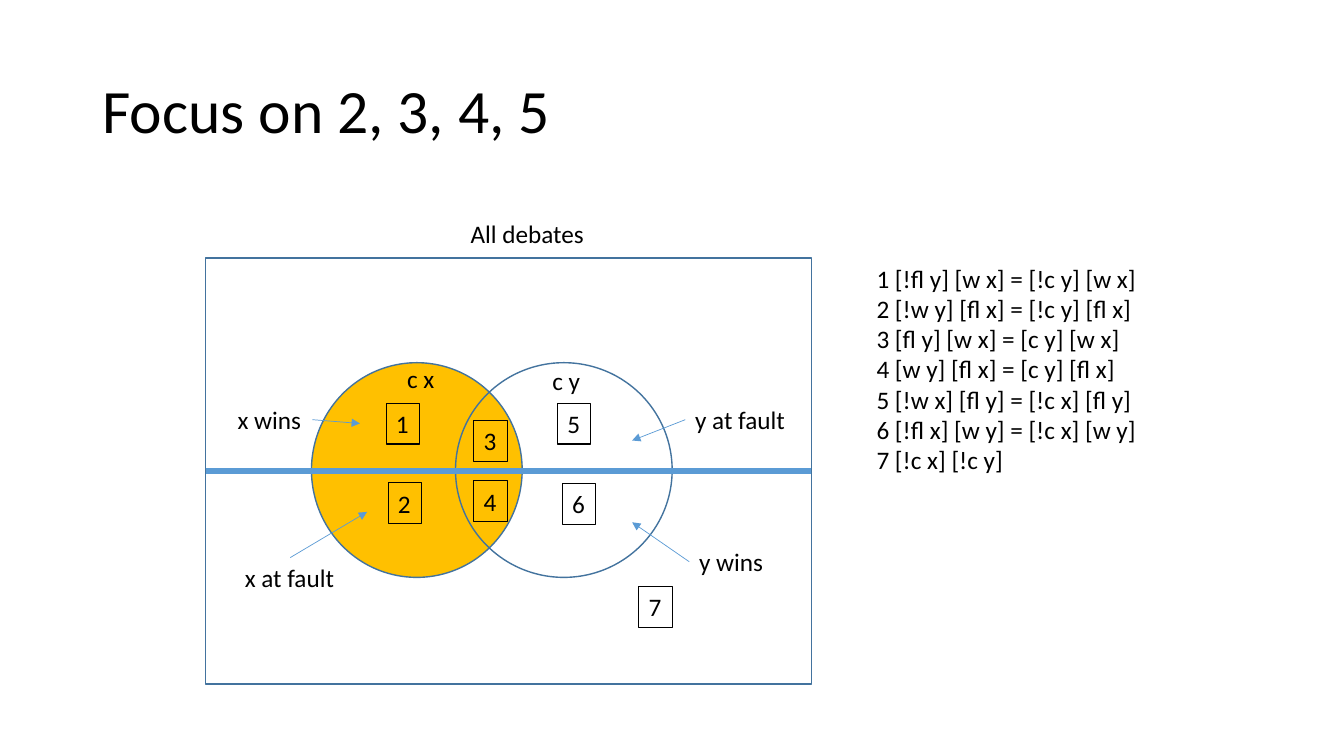
from dataclasses import dataclass
from typing import NamedTuple

import pptx
import pptx.dml.color
import pptx.enum.shapes
import pptx.enum.text
import pptx.oxml.ns
import pptx.oxml.xmlchemy
import pptx.util
from pptx.util import Cm

SHAPE = pptx.enum.shapes.MSO_SHAPE
ANCHOR = pptx.enum.text.MSO_ANCHOR
AUTO_SIZE = pptx.enum.text.MSO_AUTO_SIZE
TOP, LEFT, RIGHT = 0, 1, 3


@dataclass(frozen=True)
class Theme:
    font: str = "Calibri"
    text: str = "000000"
    accent: str = "5B9BD5"
    outline: str = "43739E"
    highlight: str = "FFC000"
    title_size: float = 44
    body_size: float = 18
    title_spacing: float = 0.9
    outline_width: float = 1
    tag_width: float = 0.75
    arrow_width: float = 0.5
    divider_width: float = 4.5


class Area(NamedTuple):
    """A position and size in centimetres."""
    left: float
    top: float
    width: float
    height: float


class Tag(NamedTuple):
    number: str
    left: float
    top: float


class Label(NamedTuple):
    text: str
    left: float
    top: float
    width: float


class Pointer(NamedTuple):
    """A label with an arrow from one of its sides to a region."""
    label: Label
    side: int
    tip_x: float
    tip_y: float


THEME = Theme()
LINE_HEIGHT = 1.03
TAG_WIDTH = 0.84

TITLE = "Focus on 2, 3, 4, 5"
TITLE_AREA = Area(2.33, 1.02, 29.21, 3.68)
X_CIRCLE = Area(7.85, 9.14, 5.31, 5.41)
Y_CIRCLE = Area(11.48, 9.14, 5.46, 5.41)
FRAME = Area(5.18, 6.5, 15.27, 10.74)

TAGS = [
    Tag("1", 9.73, 10.16),
    Tag("3", 11.94, 10.59),
    Tag("5", 14.05, 10.16),
    Tag("2", 9.78, 12.17),
    Tag("6", 14.17, 12.19),
    Tag("4", 11.94, 12.12),
    Tag("7", 16.1, 14.78),
]
LABELS = [
    Label("c x", 10.01, 9.04, 1.22),
    Label("c y", 13.67, 9.09, 1.22),
    Label("All debates", 11.61, 5.38, 3.4),
]
POINTERS = [
    Pointer(Label("x wins", 5.74, 10.06, 2.13), RIGHT, 9.07, 10.67),
    Pointer(Label("x at fault", 5.92, 14.05, 2.79), TOP, 9.25, 12.9),
    Pointer(Label("y at fault", 17.27, 10.06, 2.79), LEFT, 15.93, 11.1),
    Pointer(Label("y wins", 17.37, 13.64, 2.13), LEFT, 15.93, 13.16),
]
RULES = [
    "1 [!fl y] [w x] = [!c y] [w x]",
    "2 [!w y] [fl x] = [!c y] [fl x]",
    "3 [fl y] [w x] = [c y] [w x]",
    "4 [w y] [fl x] = [c y] [fl x]",
    "5 [!w x] [fl y] = [!c x] [fl y]",
    "6 [!fl x] [w y] = [!c x] [w y]",
    "7 [!c x] [!c y]",
]
RULES_AREA = Area(21.84, 6.5, 7.14, 5.64)


def rgb(colour: str) -> pptx.dml.color.RGBColor:
    return pptx.dml.color.RGBColor.from_string(colour)


def set_line(line, colour: str, width: float) -> None:
    line.color.rgb = rgb(colour)
    line.width = pptx.util.Pt(width)


def add_text(page, text: str, area: Area, size: float = THEME.body_size):
    box = page.shapes.add_textbox(*map(Cm, area))
    frame = box.text_frame
    frame.text = text
    frame.word_wrap = False
    frame.auto_size = AUTO_SIZE.SHAPE_TO_FIT_TEXT
    for para in frame.paragraphs:
        for span in para.runs:
            span.font.name = THEME.font
            span.font.size = pptx.util.Pt(size)
            span.font.color.rgb = rgb(THEME.text)
    return box


def add_title(page) -> None:
    box = add_text(page, TITLE, TITLE_AREA, THEME.title_size)
    frame = box.text_frame
    frame.auto_size = AUTO_SIZE.NONE
    frame.word_wrap = True
    frame.vertical_anchor = ANCHOR.MIDDLE
    frame.paragraphs[0].line_spacing = THEME.title_spacing


def add_outline(page, kind, area: Area, fill: str = ""):
    shape = page.shapes.add_shape(kind, *map(Cm, area))
    shape.shadow.inherit = False
    if fill:
        shape.fill.solid()
        shape.fill.fore_color.rgb = rgb(fill)
    else:
        shape.fill.background()
    set_line(shape.line, THEME.outline, THEME.outline_width)
    return shape


def add_label(page, label: Label):
    area = Area(label.left, label.top, label.width, LINE_HEIGHT)
    return add_text(page, label.text, area)


def add_tag(page, tag: Tag) -> None:
    box = add_label(page, Label(tag.number, tag.left, tag.top, TAG_WIDTH))
    set_line(box.line, THEME.text, THEME.tag_width)


def add_line(page, start, side: int, end_x: int, end_y: int, width: float):
    """Draw a line from the middle of a side of the start shape."""
    line = page.shapes.add_connector(
        pptx.enum.shapes.MSO_CONNECTOR.STRAIGHT, 0, 0, end_x, end_y)
    line.begin_connect(start, side)
    set_line(line.line, THEME.accent, width)
    no_effects = pptx.oxml.xmlchemy.OxmlElement("a:effectLst")
    line._element.spPr.append(no_effects)
    return line


def add_pointer(page, pointer: Pointer) -> None:
    box = add_label(page, pointer.label)
    arrow = add_line(page, box, pointer.side, Cm(pointer.tip_x),
                     Cm(pointer.tip_y), THEME.arrow_width)
    head = pptx.oxml.xmlchemy.OxmlElement("a:tailEnd")
    head.set("type", "triangle")
    arrow._element.spPr.find(pptx.oxml.ns.qn("a:ln")).append(head)


def main() -> None:
    deck = pptx.Presentation()
    deck.slide_width, deck.slide_height = Cm(33.87), Cm(19.05)
    page = deck.slides.add_slide(deck.slide_layouts[6])

    add_title(page)
    add_outline(page, SHAPE.OVAL, X_CIRCLE, THEME.highlight)
    add_outline(page, SHAPE.OVAL, Y_CIRCLE)
    frame = add_outline(page, SHAPE.RECTANGLE, FRAME)
    divider = add_line(page, frame, LEFT, frame.left + frame.width,
                       frame.top + frame.height // 2, THEME.divider_width)
    divider.end_connect(frame, RIGHT)

    for tag in TAGS:
        add_tag(page, tag)
    for label in LABELS:
        add_label(page, label)
    add_text(page, "\n".join(RULES), RULES_AREA)
    for pointer in POINTERS:
        add_pointer(page, pointer)

    deck.save("out.pptx")


if __name__ == "__main__":
    main()
